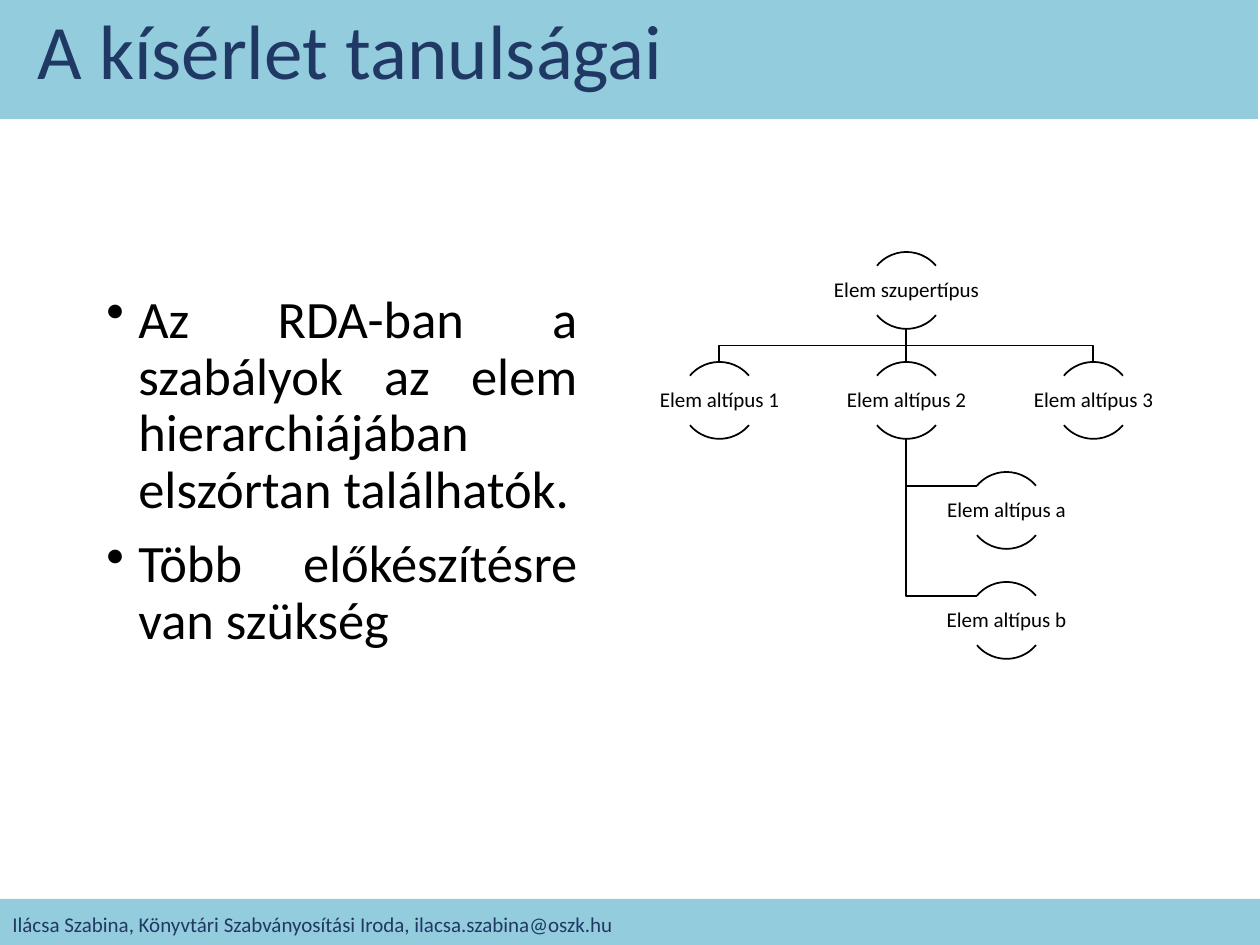
from typing import NamedTuple

from lxml.etree import SubElement
from pptx import Presentation
from pptx.dml.color import RGBColor
from pptx.enum.shapes import MSO_CONNECTOR as Connector, MSO_SHAPE as Preset
from pptx.enum.text import MSO_ANCHOR as Anchor, PP_ALIGN as Align
from pptx.oxml.ns import qn
from pptx.util import Pt

EMU_PER_PX = 914400 / 126
COLORS = {"band": "93CDDD", "heading": "203864", "body": "000000", "line": "000000"}
FONT = "Calibri"

NODE_SIZE = 77
LABEL_WIDTH, LABEL_HEIGHT = 155, 49
ARC_DROP = 14  # from the top of a node to the ends of its upper arc
TREE_TOP, ROW_PITCH = 252, 110
TREE_CENTER, COLUMN_PITCH = 906, 187
SUBTYPE_CENTER = 1006
UPPER_ARC, LOWER_ARC = (132, 192), (24, 84)


class Box(NamedTuple):
    left: int
    top: int
    width: int
    height: int


class Node(NamedTuple):
    label: str
    center: int
    row: int

    @property
    def top(self) -> int:
        return TREE_TOP + self.row * ROW_PITCH

    @property
    def bottom(self) -> int:
        return self.top + NODE_SIZE


def px(length: float) -> int:
    return round(length * EMU_PER_PX)


def emu(box: Box) -> list[int]:
    return [px(length) for length in box]


def color(name: str) -> RGBColor:
    return RGBColor.from_string(COLORS[name])


def style_line(line) -> None:
    line.color.rgb = color("line")
    line.width = Pt(1)


def add_band(slide, box: Box) -> None:
    band = slide.shapes.add_shape(Preset.RECTANGLE, *emu(box))
    band.shadow.inherit = False
    band.fill.solid()
    band.fill.fore_color.rgb = color("band")
    band.line.fill.background()


def add_text(slide, box: Box, *texts: str, size: int, tone: str = "body",
             align: Align = Align.LEFT, spacing: float = 1.0, gap: int = 0,
             bullet_indent: int = 0, margin: int | None = None) -> None:
    """Write one paragraph per text; gap is in points and separates paragraphs."""
    frame = slide.shapes.add_textbox(*emu(box)).text_frame
    frame.word_wrap = True
    frame.vertical_anchor = Anchor.MIDDLE
    if margin is not None:
        frame.margin_left = frame.margin_right = px(margin)
        frame.margin_top = frame.margin_bottom = px(margin)
    for index, text in enumerate(texts):
        paragraph = frame.add_paragraph() if index else frame.paragraphs[0]
        paragraph.text = text
        paragraph.alignment = align
        paragraph.line_spacing = spacing
        if index and gap:
            paragraph.space_before = Pt(gap)
        if bullet_indent:
            properties = paragraph._p.get_or_add_pPr()
            properties.set("marL", str(px(bullet_indent)))
            properties.set("indent", str(-px(bullet_indent)))
            SubElement(properties, qn("a:buChar")).set("char", "•")
        paragraph.font.name = FONT
        paragraph.font.size = Pt(size)
        paragraph.font.color.rgb = color(tone)


def add_straight_branch(slide, parent: Node, child: Node) -> None:
    branch = slide.shapes.add_connector(
        Connector.STRAIGHT, px(parent.center), px(parent.bottom),
        px(child.center), px(child.top))
    SubElement(branch._element.spPr, qn("a:effectLst"))
    style_line(branch.line)


def add_bent_branch(slide, *points: tuple[float, float]) -> None:
    start, *bends = [(px(x), px(y)) for x, y in points]
    builder = slide.shapes.build_freeform(*start)
    builder.add_line_segments(bends, close=False)
    branch = builder.convert_to_shape()
    branch.shadow.inherit = False
    branch.fill.background()
    style_line(branch.line)


def add_type_branch(slide, parent: Node, child: Node) -> None:
    middle = (parent.bottom + child.top) / 2
    add_bent_branch(slide, (parent.center, parent.bottom), (parent.center, middle),
                    (child.center, middle), (child.center, child.top))


def add_subtype_branch(slide, parent: Node, child: Node) -> None:
    """Hang a child from its parent's trunk, meeting the left end of its upper arc."""
    joint = child.top + ARC_DROP
    add_bent_branch(slide, (parent.center, parent.bottom), (parent.center, joint),
                    (child.center - 29, joint))


def add_node(slide, node: Node) -> None:
    circle = Box(node.center - NODE_SIZE // 2, node.top, NODE_SIZE, NODE_SIZE)
    for angles in (UPPER_ARC, LOWER_ARC):
        arc = slide.shapes.add_shape(Preset.ARC, *emu(circle))
        arc.shadow.inherit = False
        arc.adjustments[0], arc.adjustments[1] = angles
        arc.fill.background()
        style_line(arc.line)
    label_box = Box(node.center - LABEL_WIDTH // 2, node.top + ARC_DROP,
                    LABEL_WIDTH, LABEL_HEIGHT)
    add_text(slide, label_box, node.label, size=12, align=Align.CENTER,
             spacing=0.9, margin=1)


def add_hierarchy(slide) -> None:
    supertype = Node("Elem szupertípus", TREE_CENTER, 0)
    types = [Node(f"Elem altípus {number}", TREE_CENTER + (number - 2) * COLUMN_PITCH, 1)
             for number in (1, 2, 3)]
    first, middle, last = types
    subtypes = [Node(f"Elem altípus {letter}", SUBTYPE_CENTER, row)
                for row, letter in enumerate("ab", start=2)]

    for outer in (first, last):
        add_type_branch(slide, supertype, outer)
    add_straight_branch(slide, supertype, middle)
    for subtype in subtypes:
        add_subtype_branch(slide, middle, subtype)
    for node in (supertype, *types, *subtypes):
        add_node(slide, node)


def main() -> None:
    deck = Presentation()
    deck.slide_width, deck.slide_height = px(1260), px(945)
    slide = deck.slides.add_slide(deck.slide_layouts[6])

    add_band(slide, Box(0, 899, 1260, 49))
    add_band(slide, Box(-2, 0, 1260, 119))
    add_text(slide, Box(25, 18, 932, 74), "A kísérlet tanulságai",
             size=44, tone="heading", spacing=0.9)
    add_text(slide, Box(94, 234, 496, 476),
             "Az RDA-ban a szabályok az elem hierarchiájában elszórtan találhatók.",
             "Több előkészítésre van szükség",
             size=30, align=Align.JUSTIFY, spacing=0.9, gap=10, bullet_indent=32)
    add_hierarchy(slide)
    add_text(slide, Box(0, 907, 984, 34),
             "Ilácsa Szabina, Könyvtári Szabványosítási Iroda, ilacsa.szabina@oszk.hu",
             size=12, tone="heading")

    deck.save("out.pptx")


if __name__ == "__main__":
    main()
